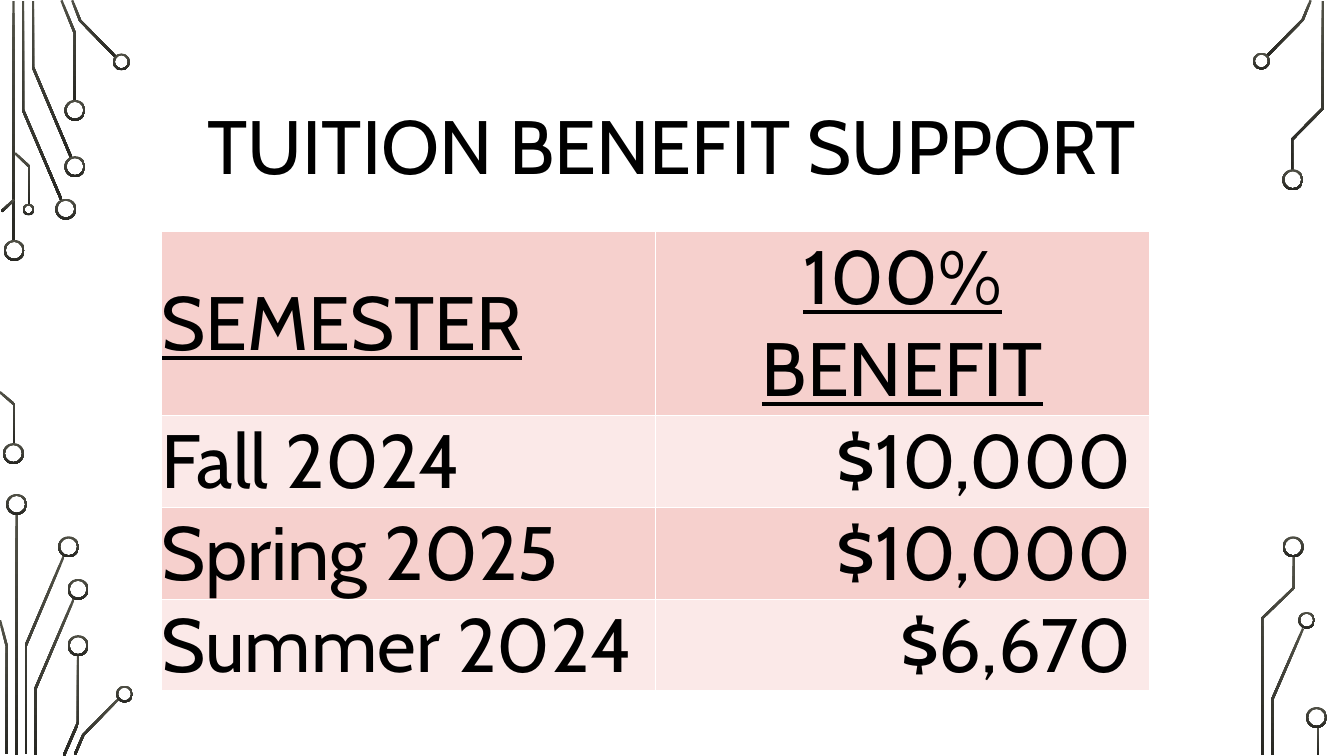
import math

from lxml import etree
from pptx import Presentation, util as u
from pptx.dml.color import RGBColor
from pptx.enum import shapes, text
from pptx.oxml.ns import qn

COLORS = {
    "text": "000000",
    "trace_top": "505046",
    "trace_bottom": "282823",
    "row_dark": "F6D0CD",
    "row_light": "FBE9E8",
    "border": "FFFFFF",
}

# Circuit traces as centre lines, in cm
TRACES = [
    # Upper left
    [(0.34, 0.03), (0.34, 6.1)],
    [(1.55, 5.04), (0.58, 2.77), (0.58, 0.03)],
    [(1.8, 3.98), (0.83, 1.69), (0.83, 0.03)],
    [(1.89, 2.54), (1.89, 0.84), (1.55, 0.01)],
    [(2.93, 1.45), (2.02, 0.52), (1.82, 0.01)],
    [(0.04, 5.33), (0.36, 5.03)],
    [(0.36, 11.2), (0.36, 10.19), (0, 9.88)],
    [(0.74, 5.16), (0.74, 4.2), (0.38, 3.86)],
    # Lower left
    [(0.42, 12.95), (0.42, 19.02)],
    [(0.65, 19), (0.65, 16.27), (1.61, 14.01)],
    [(0.17, 19), (0.17, 16.28), (0, 15.63)],
    [(0.9, 19.02), (0.9, 17.34), (1.87, 15.07)],
    [(1.61, 19.04), (1.97, 18.21), (1.97, 16.51)],
    [(1.89, 19.01), (2.1, 18.52), (3, 17.6)],
    # Right
    [(31.93, 1.41), (32.83, 0.5), (33.03, 0.01)],
    [(32.07, 19.02), (32.07, 17.61), (32.84, 15.84)],
    [(32.56, 4.29), (32.56, 3.52), (33.34, 2.73), (33.34, 0.03)],
    [(31.81, 19.02), (31.81, 15.58), (32.6, 14.82), (32.6, 14.02)],
    [(33.21, 18.31), (33.21, 19.02)],
]

# Ring centres in cm, by diameter
RINGS = {
    0.53: [(0.36, 6.31), (0.34, 11.43), (1.66, 5.27), (1.89, 4.2), (1.89, 2.78),
           (0.42, 12.71), (1.73, 13.78), (1.97, 14.85), (1.97, 16.27),
           (32.58, 4.53), (32.59, 13.78), (33.18, 18.08)],
    0.43: [(3.06, 1.56), (3.14, 17.49), (31.79, 1.54), (32.93, 15.63)],
    0.3: [(0.72, 5.28)],
}

BENEFITS = [
    ("SEMESTER", "100% BENEFIT"),
    ("Fall 2024", "$10,000"),
    ("Spring 2025", "$10,000"),
    ("Summer 2024", "$6,670"),
]


def rgb(name):
    return RGBColor.from_string(COLORS[name])


def write_text(frame, content, size=54, font="Cabin", color="text", align="LEFT",
               underline=False, spacing=1.0):
    paragraph = frame.paragraphs[0]
    paragraph.alignment = getattr(text.PP_ALIGN, align)
    paragraph.line_spacing = spacing
    run = paragraph.add_run()
    run.text = content
    run.font.size = u.Pt(size)
    run.font.name = font
    run.font.bold = False
    run.font.underline = underline
    run.font.color.rgb = rgb(color)


def ribbon(points, width):
    """Outline of a band of even width along a centre line, with mitred bends."""
    directions = [math.atan2(y2 - y1, x2 - x1)
                  for (x1, y1), (x2, y2) in zip(points, points[1:])]
    before, after = directions[:1] + directions, directions + directions[-1:]
    left, right = [], []
    for (x, y), start, end in zip(points, before, after):
        turn = math.remainder(end - start, math.tau) / 2
        reach = width / 2 / math.cos(turn)
        dx, dy = -math.sin(start + turn) * reach, math.cos(start + turn) * reach
        left.append((x + dx, y + dy))
        right.append((x - dx, y - dy))
    return left + right[::-1]


class SlideBuilder:
    trace_width = 0.06
    ring_thickness = 0.05

    def __init__(self, presentation):
        self.slide = presentation.slides.add_slide(presentation.slide_layouts[5])

    def paint(self, shape):
        shape.shadow.inherit = False
        shape.line.fill.background()
        shape.fill.gradient()
        shape.fill.gradient_angle = 270
        for stop, name in zip(shape.fill.gradient_stops, ("trace_top", "trace_bottom")):
            stop.color.rgb = rgb(name)

    def trace(self, points):
        outline = [(u.Cm(x), u.Cm(y)) for x, y in ribbon(points, self.trace_width)]
        builder = self.slide.shapes.build_freeform(*outline[0])
        builder.add_line_segments(outline[1:], close=True)
        self.paint(builder.convert_to_shape())

    def ring(self, x, y, diameter):
        shape = self.slide.shapes.add_shape(
            shapes.MSO_SHAPE.DONUT, u.Cm(x - diameter / 2), u.Cm(y - diameter / 2),
            u.Cm(diameter), u.Cm(diameter))
        shape.adjustments[0] = self.ring_thickness / diameter
        self.paint(shape)

    def title(self, content, left, top, width, height):
        shape = self.slide.shapes.title
        shape.left, shape.top = u.Cm(left), u.Cm(top)
        shape.width, shape.height = u.Cm(width), u.Cm(height)
        frame = shape.text_frame
        frame.word_wrap = True
        frame.auto_size = text.MSO_AUTO_SIZE.NONE
        frame.vertical_anchor = text.MSO_ANCHOR.MIDDLE
        write_text(frame, content, align="CENTER", spacing=0.9)

    def cell_borders(self, cell):
        properties = cell._tc.get_or_add_tcPr()
        for position, side in enumerate(("a:lnL", "a:lnR", "a:lnT", "a:lnB")):
            line = etree.Element(qn(side), w=str(u.Pt(1)))
            fill = etree.SubElement(line, qn("a:solidFill"))
            etree.SubElement(fill, qn("a:srgbClr"), val=COLORS["border"])
            properties.insert(position, line)

    def table(self, rows, left, top, width, heights):
        table = self.slide.shapes.add_table(
            len(rows), len(rows[0]), u.Cm(left), u.Cm(top),
            u.Cm(width), u.Cm(sum(heights))).table
        table.first_row = table.horz_banding = False
        for r, (values, height) in enumerate(zip(rows, heights)):
            table.rows[r].height = u.Cm(height)
            for c, value in enumerate(values):
                cell = table.cell(r, c)
                header, amount = r == 0, r > 0 and c == 1
                cell.margin_left = cell.margin_top = cell.margin_bottom = 0
                cell.margin_right = u.Cm(0.45) if amount else 0
                cell.vertical_anchor = text.MSO_ANCHOR.MIDDLE
                cell.fill.solid()
                cell.fill.fore_color.rgb = rgb("row_light" if r % 2 else "row_dark")
                self.cell_borders(cell)
                align = "RIGHT" if amount else "CENTER" if c else "LEFT"
                write_text(cell.text_frame, value, align=align, underline=header)


def main():
    presentation = Presentation()
    presentation.slide_width, presentation.slide_height = u.Cm(33.87), u.Cm(19.05)
    builder = SlideBuilder(presentation)

    # Circuit decoration
    for points in TRACES:
        builder.trace(points)
    for diameter, centres in RINGS.items():
        for x, y in centres:
            builder.ring(x, y, diameter)

    # Title and benefit table
    builder.title("TUITION BENEFIT SUPPORT", 3.18, 1.73, 27.5, 4.1)
    builder.table(BENEFITS, 4.07, 5.83, 24.9, [4.62, 2.31, 2.31, 2.31])

    presentation.save("out.pptx")


if __name__ == "__main__":
    main()
